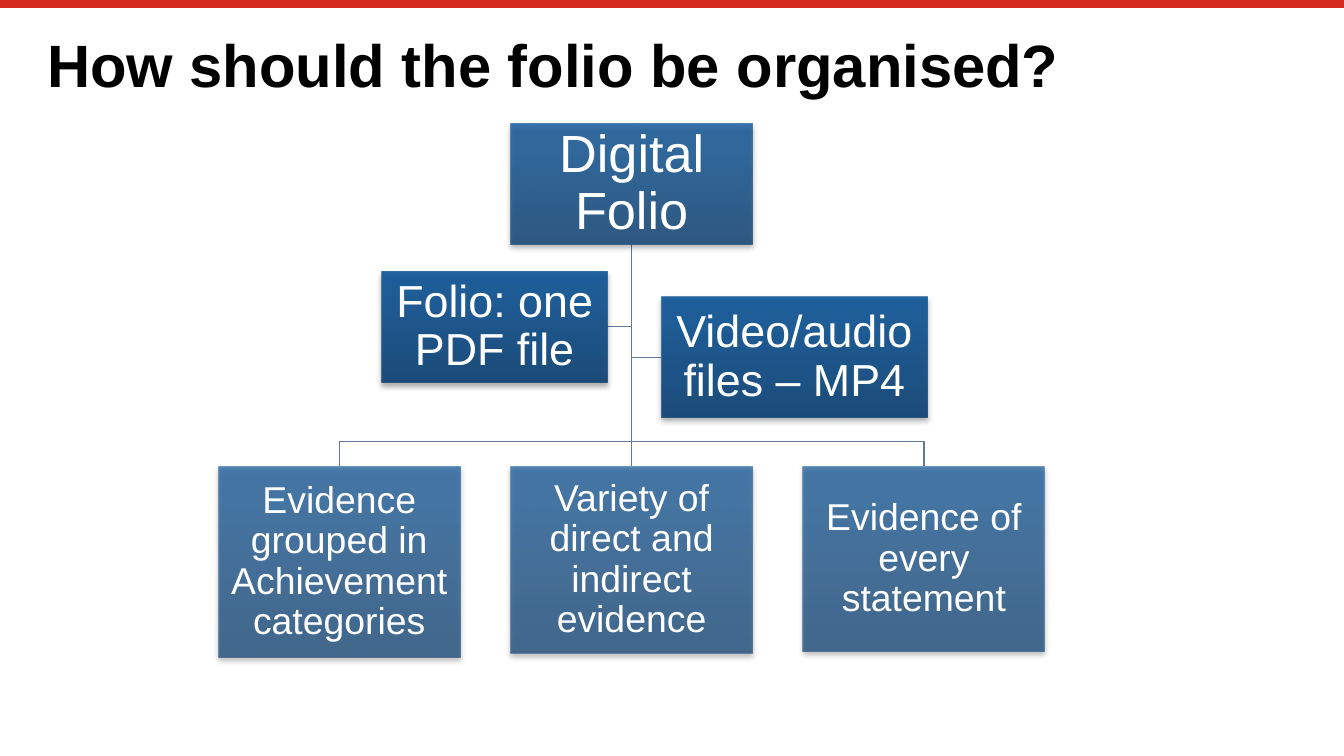
from lxml.etree import SubElement
from pptx import Presentation
from pptx.dml.color import RGBColor
from pptx.enum.shapes import MSO_CONNECTOR as Connector, MSO_SHAPE as Shape
from pptx.enum.text import MSO_ANCHOR as Anchor, PP_ALIGN as Align
from pptx.oxml.ns import qn
from pptx.util import Inches, Pt

BLACK = RGBColor(0x00, 0x00, 0x00)
WHITE = RGBColor(0xFF, 0xFF, 0xFF)
RED = RGBColor(0xD5, 0x2B, 0x1E)
BRANCH = RGBColor(0x61, 0x78, 0x9B)
GRADIENT = [(0, RGBColor(0x0D, 0x41, 0x73)), (80, RGBColor(0x11, 0x55, 0x95)),
            (100, RGBColor(0x0E, 0x55, 0x98))]

WIDTH, HEIGHT = 100, 56.25
TRUNK, PITCH, NODE_WIDTH = 47, 21.75, 18
ROOT_TOP, ROOT_HEIGHT = 9.2, 9
ROOT_BOTTOM = ROOT_TOP + ROOT_HEIGHT
FORK, LEAF_TOP = 32.85, 34.7
LEAVES = [("Evidence grouped in Achievement categories", 14.2),
          ("Variety of direct and indirect evidence", 13.9),
          ("Evidence of every statement", 13.8)]
ASSISTANTS = [("Folio: one PDF file", 28.4, 20.2, 16.8, 8.3, 45.2, 24.3),
              ("Video/audio files – MP4", 49.2, 22.1, 19.8, 9, 49.2, 26.6)]


def grid(*cells):
    """Turn counts of grid cells, a hundred across the slide, into lengths."""
    return [Inches(cell / 10) for cell in cells]


def add_color(parent, color, opacity):
    """Append a colour with an opacity in percent."""
    tint = SubElement(parent, qn("a:srgbClr"), val=str(color))
    SubElement(tint, qn("a:alpha"), val=str(opacity * 1000))


def set_gradient(box, opacity):
    """Fill a box with the translucent blue gradient, running upwards."""
    box.fill.gradient()
    fill = box._element.spPr.find(qn("a:gradFill"))
    for child in list(fill):
        fill.remove(child)
    stops = SubElement(fill, qn("a:gsLst"))
    for position, color in GRADIENT:
        stop = SubElement(stops, qn("a:gs"), pos=str(position * 1000))
        add_color(stop, color, opacity)
    SubElement(fill, qn("a:lin"), ang="16200000", scaled="0")


def set_shadow(box):
    """Give a box a soft shadow just below it."""
    box.shadow.inherit = False
    effects = box._element.spPr.find(qn("a:effectLst"))
    shadow = SubElement(effects, qn("a:outerShdw"), blurRad=str(Pt(3.1)),
                        dist=str(Pt(1.8)), dir="5400000", rotWithShape="0")
    add_color(shadow, BLACK, 35)


def add_text(page, place, text, size, color, inset, anchor, bold=False):
    """Add a text box of one paragraph and return the paragraph."""
    frame = page.shapes.add_textbox(*place).text_frame
    frame.word_wrap = True
    frame.vertical_anchor = anchor
    frame.margin_left = frame.margin_right = Inches(inset)
    frame.margin_top = frame.margin_bottom = Inches(inset)
    para = frame.paragraphs[0]
    para.text = text
    para.font.name = "Arial"
    para.font.size = Pt(size)
    para.font.bold = bold
    para.font.color.rgb = color
    return para


def add_node(page, text, left, top, width, height, size, opacity, inset=0.02):
    """Add one box of the chart with its label."""
    place = grid(left, top, width, height)
    box = page.shapes.add_shape(Shape.RECTANGLE, *place)
    set_gradient(box, opacity)
    box.line.fill.background()
    set_shadow(box)
    para = add_text(page, place, text, size, WHITE, inset, Anchor.MIDDLE)
    para.alignment = Align.CENTER
    para.line_spacing = 0.9


def add_line(page, start, end, color, weight):
    """Add a straight line between two grid points."""
    line = page.shapes.add_connector(Connector.STRAIGHT, *grid(*start, *end))
    line.line.color.rgb = color
    line.line.width = Pt(weight)
    SubElement(line._element.spPr, qn("a:effectLst"))


def add_branch(page, *corners):
    """Add an angled branch from the bottom of the root box."""
    builder = page.shapes.build_freeform(*grid(TRUNK, ROOT_BOTTOM))
    builder.add_line_segments([grid(*corner) for corner in corners], close=False)
    branch = builder.convert_to_shape()
    branch.fill.background()
    branch.line.color.rgb = BRANCH
    branch.line.width = Pt(0.75)
    branch.shadow.inherit = False


def main():
    """Build the slide and save it."""
    deck = Presentation()
    deck.slide_width, deck.slide_height = grid(WIDTH, HEIGHT)
    page = deck.slides.add_slide(deck.slide_layouts[6])
    add_line(page, (0, 0.3), (WIDTH, 0.3), RED, 4.2)
    add_text(page, grid(3.5, 2.1, 92.9, 3.6), "How should the folio be organised?",
             32, BLACK, 0, Anchor.TOP, bold=True)

    for *_, end, level in ASSISTANTS:
        add_branch(page, (TRUNK, level), (end, level))
    for center in (TRUNK + PITCH, TRUNK - PITCH):
        add_branch(page, (TRUNK, FORK), (center, FORK), (center, LEAF_TOP))
    add_line(page, (TRUNK, ROOT_BOTTOM), (TRUNK, LEAF_TOP), BRANCH, 0.75)

    root_left = TRUNK - NODE_WIDTH / 2
    add_node(page, "Digital Folio", root_left, ROOT_TOP, NODE_WIDTH, ROOT_HEIGHT, 28, 80)
    for index, (text, height) in enumerate(LEAVES):
        left = root_left + (index - 1) * PITCH
        add_node(page, text, left, LEAF_TOP, NODE_WIDTH, height, 20, 70, inset=0.01)
    for text, left, top, width, height, *_ in ASSISTANTS:
        add_node(page, text, left, top, width, height, 24, 90)

    deck.save("out.pptx")


if __name__ == "__main__":
    main()
